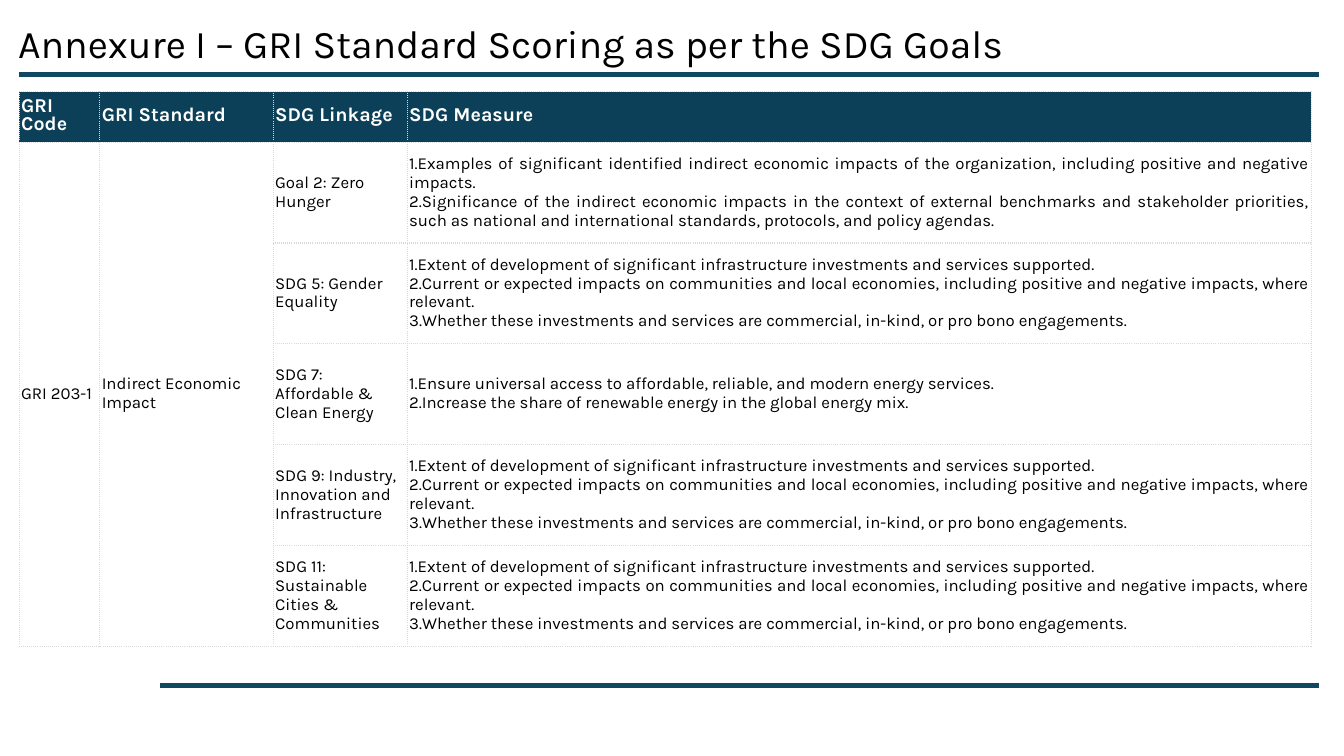
from lxml.etree import SubElement
from pptx import Presentation
from pptx.dml.color import RGBColor
from pptx.enum.shapes import MSO_CONNECTOR
from pptx.enum.text import MSO_ANCHOR, MSO_AUTO_SIZE, PP_ALIGN
from pptx.oxml.ns import qn
from pptx.util import Pt

COLORS = {"rule": "104862", "header": "0B4058", "border": "D9D9D9",
          "text": "000000", "header text": "FFFFFF"}
LEFT, RIGHT = 13.68, 942.48
TABLE_TOP = 65.52
COLUMN_WIDTHS = [57.6, 123.84, 95.76, 645.84]
ROW_HEIGHTS = [36] + [72] * 5
HEADINGS = ["GRI Code", "GRI Standard", "SDG Linkage", "SDG Measure"]
INVESTMENT_MEASURES = [
    "Extent of development of significant infrastructure investments and services supported.",
    "Current or expected impacts on communities and local economies, including positive and "
    "negative impacts, where relevant.",
    "Whether these investments and services are commercial, in-kind, or pro bono engagements.",
]
LINKAGES = [
    ("Goal 2: Zero Hunger", [
        "Examples of significant identified indirect economic impacts of the organization, "
        "including positive and negative impacts.",
        "Significance of the indirect economic impacts in the context of external benchmarks "
        "and stakeholder priorities, such as national and international standards, protocols, "
        "and policy agendas.",
    ]),
    ("SDG 5: Gender Equality", INVESTMENT_MEASURES),
    ("SDG 7: Affordable & Clean Energy", [
        "Ensure universal access to affordable, reliable, and modern energy services.",
        "Increase the share of renewable energy in the global energy mix.",
    ]),
    ("SDG 9: Industry, Innovation and Infrastructure", INVESTMENT_MEASURES),
    ("SDG 11: Sustainable Cities & Communities", INVESTMENT_MEASURES),
]


def apply(target, values):
    """Set every attribute in values on target."""
    for name, value in values.items():
        setattr(target, name, value)


class SlideBuilder:
    """Hold the style and the current slide, and add elements to it."""

    font_name = "Karla"
    title_format = {"size": Pt(28), "bold": False}
    header_format = {"size": Pt(14), "bold": True}
    body_format = {"size": Pt(12), "bold": False}
    cell_format = {"vertical_anchor": MSO_ANCHOR.MIDDLE,
                   "margin_left": Pt(1.44), "margin_right": Pt(1.44),
                   "margin_top": Pt(0.72), "margin_bottom": Pt(0.72)}

    def __init__(self, page):
        """Keep the slide to draw on."""
        self.page = page

    def fill_para(self, para, text, font_format, color, spacing, align=PP_ALIGN.LEFT):
        """Fill one paragraph with a formatted span."""
        apply(para, {"alignment": align, "line_spacing": spacing})
        span = para.add_run()
        span.text = text
        apply(span.font, {"name": self.font_name, **font_format})
        span.font.color.rgb = RGBColor.from_string(COLORS[color])

    def title(self, text, left, top, width, height):
        """Place and format the title placeholder."""
        box = self.page.shapes.title
        apply(box, {"left": Pt(left), "top": Pt(top), "width": Pt(width), "height": Pt(height)})
        apply(box.text_frame, {"vertical_anchor": MSO_ANCHOR.MIDDLE, "word_wrap": True,
                               "auto_size": MSO_AUTO_SIZE.NONE})
        self.fill_para(box.text_frame.paragraphs[0], text, self.title_format, "text", 0.9)

    def rule(self, left, right, top):
        """Draw a horizontal rule."""
        line = self.page.shapes.add_connector(
            MSO_CONNECTOR.STRAIGHT, Pt(left), Pt(top), Pt(right), Pt(top))
        line.line.width = Pt(3)
        line.line.color.rgb = RGBColor.from_string(COLORS["rule"])
        SubElement(line._element.spPr, qn("a:effectLst"))

    def border(self, cell):
        """Give a cell dotted borders on all sides."""
        properties = cell._tc.get_or_add_tcPr()
        for side in ("a:lnL", "a:lnR", "a:lnT", "a:lnB"):
            line = SubElement(properties, qn(side), w=str(Pt(1)))
            fill = SubElement(line, qn("a:solidFill"))
            SubElement(fill, qn("a:srgbClr"), val=COLORS["border"])
            SubElement(line, qn("a:prstDash"), val="sysDot")

    def table(self, left, top, widths, heights):
        """Add a plain bordered table."""
        frame = self.page.shapes.add_table(
            len(heights), len(widths), Pt(left), Pt(top), Pt(sum(widths)), Pt(sum(heights)))
        table = frame.table
        apply(table, {"first_row": False, "horz_banding": False})
        for column, width in zip(table.columns, widths):
            column.width = Pt(width)
        for row, height in zip(table.rows, heights):
            row.height = Pt(height)
        for cell in table.iter_cells():
            apply(cell, self.cell_format)
            self.border(cell)
            cell.fill.background()
        return table

    def header_cell(self, cell, text):
        """Fill a heading cell."""
        cell.fill.solid()
        cell.fill.fore_color.rgb = RGBColor.from_string(COLORS["header"])
        self.fill_para(cell.text_frame.paragraphs[0], text, self.header_format,
                       "header text", Pt(13.5))

    def body_cell(self, cell, text):
        """Fill a body cell with one paragraph."""
        self.fill_para(cell.text_frame.paragraphs[0], text, self.body_format, "text", Pt(13.5))

    def numbered_cell(self, cell, items):
        """Fill a body cell with a justified numbered list."""
        frame = cell.text_frame
        for index, item in enumerate(items):
            para = frame.add_paragraph() if index else frame.paragraphs[0]
            properties = para._p.get_or_add_pPr()
            properties.set("marL", "0")
            properties.set("indent", "0")
            SubElement(properties, qn("a:buFont"), typeface="+mj-lt")
            SubElement(properties, qn("a:buAutoNum"), type="arabicPeriod")
            self.fill_para(para, item, self.body_format, "text", Pt(13.5), PP_ALIGN.JUSTIFY)


def main():
    """Build and save the deck."""
    deck = Presentation()
    apply(deck, {"slide_width": Pt(960), "slide_height": Pt(540)})
    builder = SlideBuilder(deck.slides.add_slide(deck.slide_layouts[5]))
    builder.title("Annexure I – GRI Standard Scoring as per the SDG Goals", 5.76, 12.24, 828, 41.04)
    builder.rule(LEFT, RIGHT, 53.28)
    builder.rule(114.48, RIGHT, 489.6)

    table = builder.table(LEFT, TABLE_TOP, COLUMN_WIDTHS, ROW_HEIGHTS)
    for column, heading in enumerate(HEADINGS):
        builder.header_cell(table.cell(0, column), heading)
    for column, text in enumerate(["GRI 203-1", "Indirect Economic Impact"]):
        table.cell(1, column).merge(table.cell(len(LINKAGES), column))
        builder.body_cell(table.cell(1, column), text)
    for row, (linkage, measures) in enumerate(LINKAGES, start=1):
        builder.body_cell(table.cell(row, 2), linkage)
        builder.numbered_cell(table.cell(row, 3), measures)
    deck.save("out.pptx")


if __name__ == "__main__":
    main()
